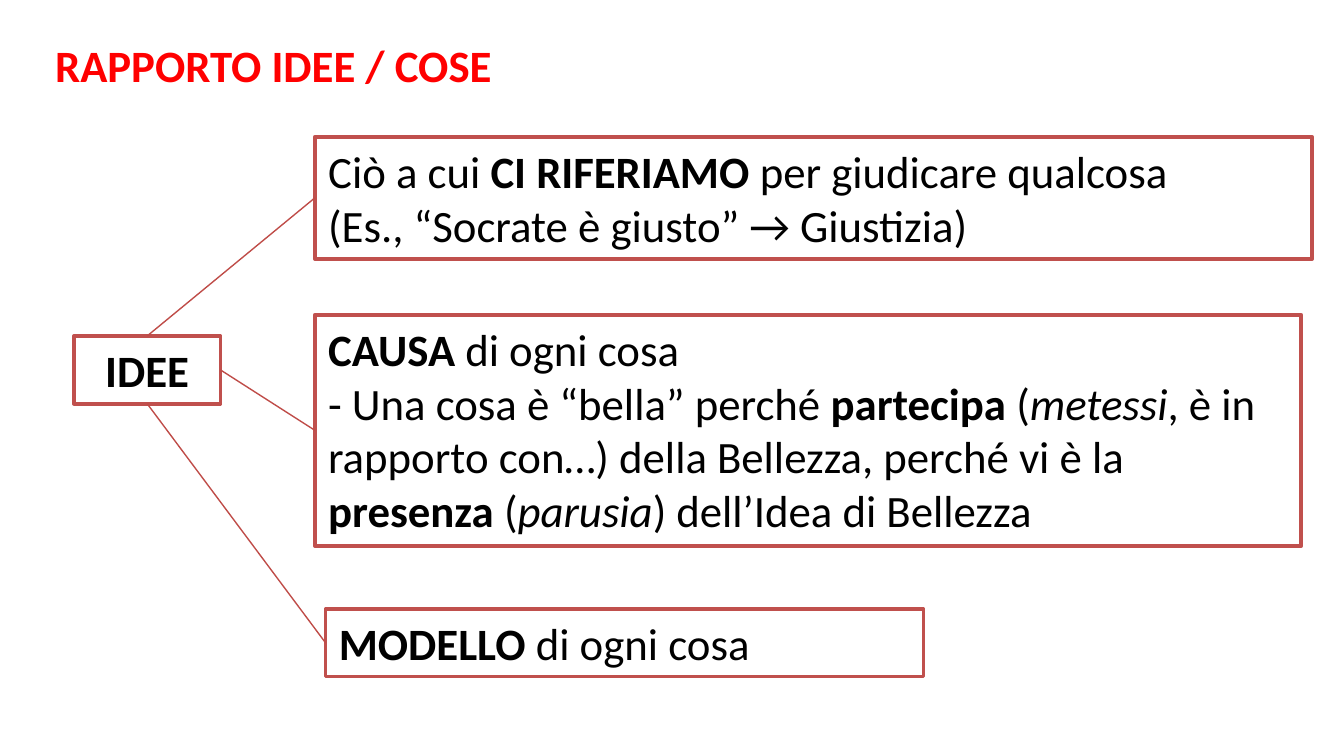
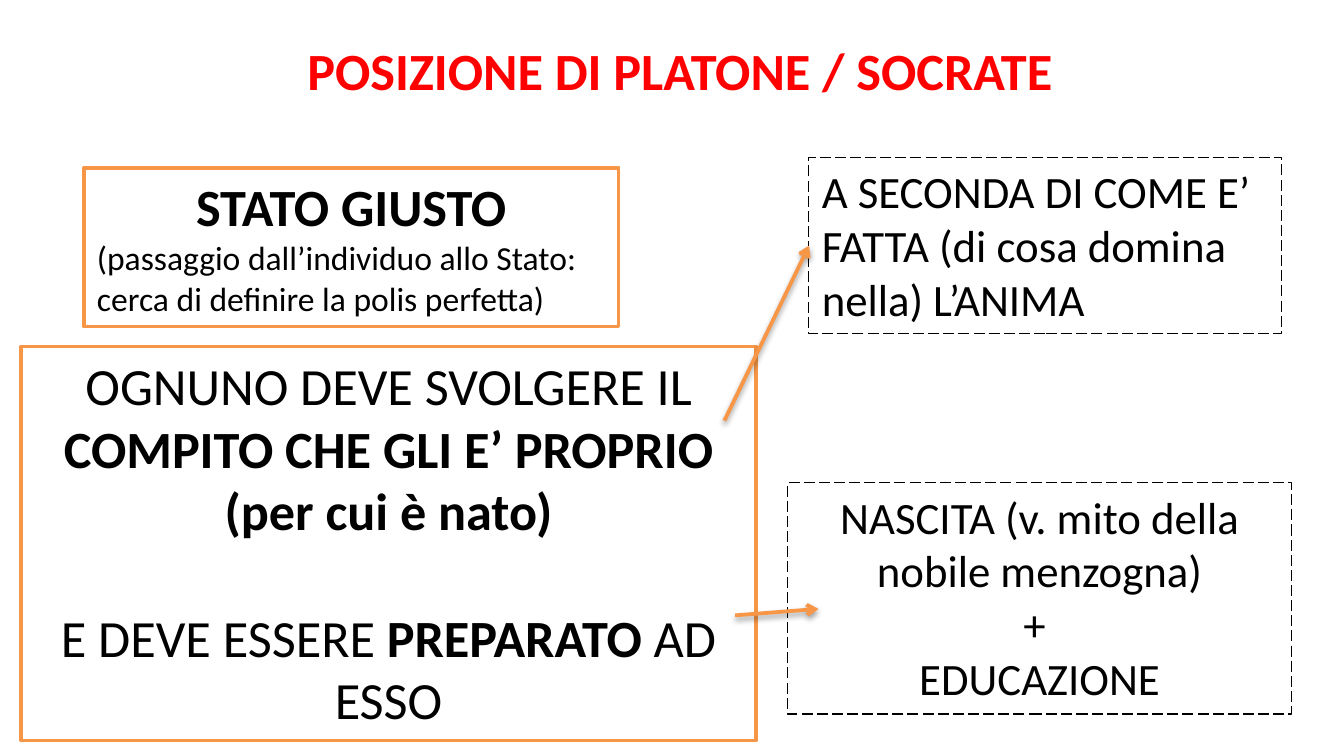
"""Two slides on Plato: ideas and things, and the just state."""
import lxml.etree
import pptx
import pptx.dml.color
import pptx.enum.dml
import pptx.enum.shapes
import pptx.enum.text
import pptx.oxml.ns
import pptx.util

ALIGN = pptx.enum.text.PP_ALIGN
DASH = pptx.enum.dml.MSO_LINE
KIND = pptx.enum.shapes
LEFT, MID = ALIGN.LEFT, ALIGN.CENTER
RED, BRICK, ROSE, ORANGE = "FF0000", "C0504D", "BF4C48", "F79646"
BLACK, WHITE = "000000", "FFFFFF"
TOP, WEST, SOUTH, EAST = range(4)

deck = pptx.Presentation()
deck.slide_width = pptx.util.Inches(10)
deck.slide_height = deck.slide_width * 9 // 16
GRID = (deck.slide_width / 100, deck.slide_height / 100) * 2
FRAME = {
    "word_wrap": True,
    "auto_size": pptx.enum.text.MSO_AUTO_SIZE.NONE,
    "vertical_anchor": pptx.enum.text.MSO_ANCHOR.TOP,
    "margin_left": pptx.util.Inches(0.1),
    "margin_right": pptx.util.Inches(0.1),
    "margin_top": pptx.util.Inches(0.05),
    "margin_bottom": pptx.util.Inches(0.05),
}


def hue(part, code):
    if hasattr(part, "solid"):
        part.solid()
        part = part.fore_color
    elif hasattr(part, "color"):
        part = part.color
    part.rgb = pptx.dml.color.RGBColor.from_string(code)


def write(shape, paras, code=BLACK):
    frame = shape.text_frame
    for key, value in FRAME.items():
        setattr(frame, key, value)
    for num, (text, size, side, gap) in enumerate(paras):
        para = frame.add_paragraph() if num else frame.paragraphs[0]
        para.alignment = side
        para.space_before = pptx.util.Pt(gap)
        for bold, chunk in enumerate(text.split("*")):
            for slant, piece in enumerate(chunk.split("_")):
                if not piece:
                    continue
                run = para.add_run()
                run.text = piece
                look = {"name": "Calibri", "size": pptx.util.Pt(size),
                        "bold": bold % 2 == 1, "italic": slant % 2 == 1}
                for key, value in look.items():
                    setattr(run.font, key, value)
                hue(run.font, code)


FIRM = {"fill": WHITE, "width": 2, "dash": DASH.SOLID}
THIN = {"fill": None, "width": 0.75, "dash": DASH.LONG_DASH}

pages = [
    {
        "title": ("*RAPPORTO IDEE / COSE*", 24, (3.1, 4.1, 50.8, 8.9)),
        "boxes": {
            "ideas": ((5.5, 44.45, 10.9, 8.95), BRICK, FIRM,
                      [("*IDEE*", 24, MID, 0)]),
            "judge": ((23.43, 18.1, 74.2, 16.15), BRICK, FIRM, [
                ("Ciò a cui *CI RIFERIAMO *per giudicare qualcosa", 24, LEFT, 0),
                ("(Es., “Socrate è giusto” → Giustizia)", 24, LEFT, 0)]),
            "cause": ((23.43, 41.65, 73.4, 30.55), BRICK, FIRM, [
                ("*CAUSA* di ogni cosa", 24, LEFT, 0),
                ("- Una cosa è “bella” perché *partecipa* (_metessi_, è in "
                 "rapporto con…) della Bellezza, perché vi è la *presenza* "
                 "(_parusia_) dell’Idea di Bellezza", 24, LEFT, 0)]),
            "model": ((24.22, 80.55, 44.5, 8.95), BRICK, FIRM,
                      [("*MODELLO* di ogni cosa", 24, LEFT, 0)]),
        },
        "links": [("ideas", TOP, "judge"), ("ideas", SOUTH, "model"),
                  ("ideas", EAST, "cause")],
        "rays": [],
    },
    {
        "title": ("*POSIZIONE DI PLATONE / SOCRATE*", 28,
                  (21.87, 4.15, 66.4, 10.15)),
        "boxes": {
            "state": ((6.23, 22.2, 39.8, 21), ORANGE, FIRM, [
                ("*STATO GIUSTO*", 28, MID, 0),
                ("(passaggio dall’individuo allo Stato: cerca di definire "
                 "la polis perfetta)", 18, LEFT, 0)]),
            "task": ((1.56, 45.85, 54.7, 52.1), ORANGE, FIRM, [
                ("OGNUNO DEVE SVOLGERE IL *COMPITO CHE GLI E’ PROPRIO "
                 "(per cui è nato)*", 28, MID, 0),
                ("E DEVE ESSERE *PREPARATO* AD ESSO", 28, MID, 34)]),
            "soul": ((60.16, 20.8, 35.2, 23.3), BLACK, THIN, [
                ("A SECONDA DI COME E’ FATTA (di cosa domina nella) L’ANIMA",
                 24, LEFT, 0)]),
            "birth": ((58.6, 63.85, 37.5, 30.6), BLACK, THIN, [
                ("NASCITA (v. mito della nobile menzogna)", 24, MID, 0),
                ("+ ", 24, MID, 0),
                ("EDUCAZIONE", 24, MID, 0)]),
        },
        "links": [],
        "rays": [(53.9, 55.65, 60.2, 32.5), (54.7, 81.4, 60.9, 80.55)],
    },
]

for page in pages:
    slide = deck.slides.add_slide(deck.slide_layouts[5])
    text, size, place = page["title"]
    head = slide.shapes.title
    for key, share, unit in zip(("left", "top", "width", "height"), place, GRID):
        setattr(head, key, round(share * unit))
    write(head, [(text, size, LEFT, 0)], RED)

    boxes = {}
    for name, (place, code, form, paras) in page["boxes"].items():
        spot = [round(share * unit) for share, unit in zip(place, GRID)]
        box = slide.shapes.add_shape(KIND.MSO_SHAPE.RECTANGLE, *spot)
        box.shadow.inherit = False
        if form["fill"]:
            hue(box.fill, form["fill"])
        else:
            box.fill.background()
        hue(box.line, code)
        box.line.width = pptx.util.Pt(form["width"])
        box.line.dash_style = form["dash"]
        write(box, paras)
        boxes[name] = box

    for link in page["links"] + page["rays"]:
        ray = link in page["rays"]
        ends = [0] * 4
        if ray:
            ends = [round(share * unit) for share, unit in zip(link, GRID)]
        line = slide.shapes.add_connector(KIND.MSO_CONNECTOR.STRAIGHT, *ends)
        hue(line.line, ORANGE if ray else ROSE)
        line.line.width = pptx.util.Pt(2 if ray else 0.75)
        glow = lxml.etree.SubElement(line._element.spPr,
                                     pptx.oxml.ns.qn("a:effectLst"))
        if not ray:
            line.begin_connect(boxes[link[0]], link[1])
            line.end_connect(boxes[link[2]], WEST)
            continue
        lxml.etree.SubElement(line.get_or_add_ln(),
                              pptx.oxml.ns.qn("a:tailEnd"), type="arrow")
        shade = lxml.etree.SubElement(
            glow, pptx.oxml.ns.qn("a:outerShdw"), blurRad="40000",
            dist="20000", dir="5400000", rotWithShape="0")
        tint = lxml.etree.SubElement(
            shade, pptx.oxml.ns.qn("a:srgbClr"), val=BLACK)
        lxml.etree.SubElement(tint, pptx.oxml.ns.qn("a:alpha"), val="38000")

deck.save("out.pptx")
